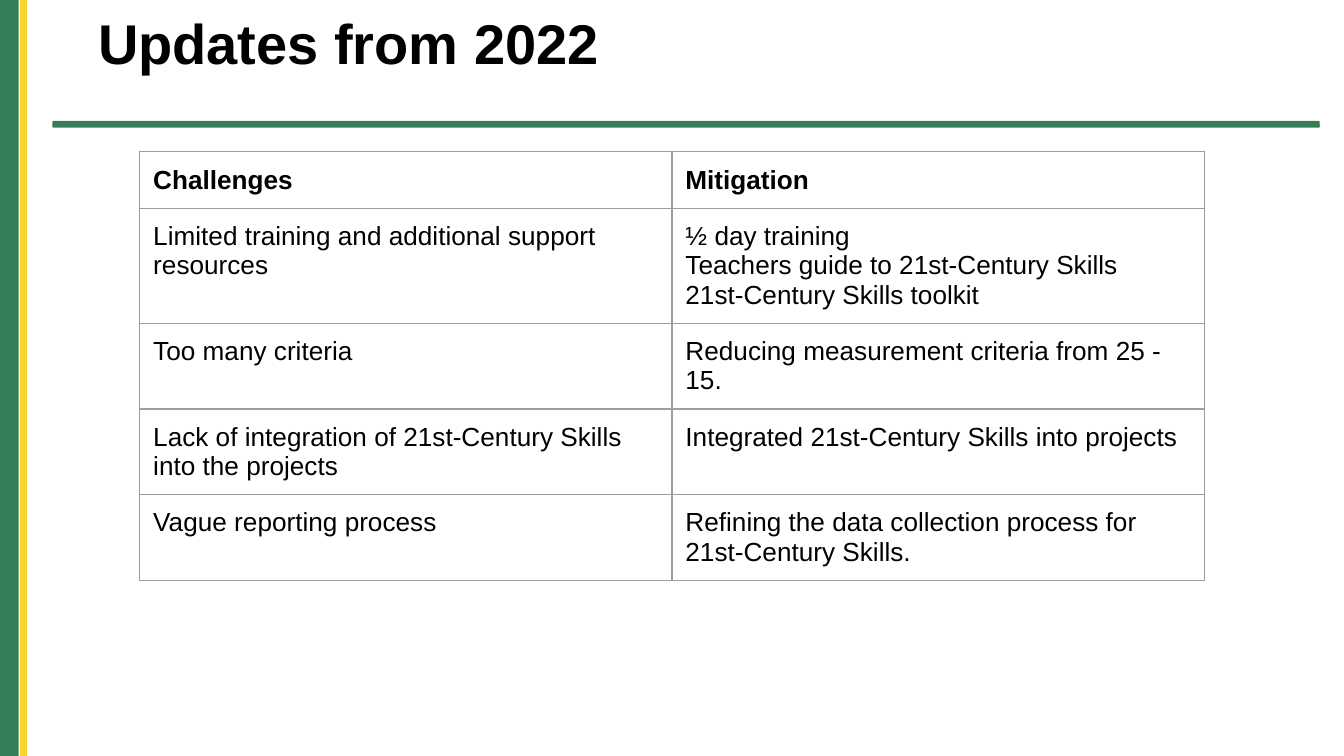
from lxml import etree
from pptx import Presentation
from pptx.dml.color import RGBColor
from pptx.enum.shapes import MSO_SHAPE
from pptx.enum.text import MSO_ANCHOR, MSO_AUTO_SIZE, PP_ALIGN
from pptx.oxml.ns import qn
from pptx.util import Inches, Pt

RECTANGLE = MSO_SHAPE.RECTANGLE
ROUNDED = MSO_SHAPE.ROUNDED_RECTANGLE
TOP = MSO_ANCHOR.TOP
LEFT = PP_ALIGN.LEFT
NO_AUTOFIT = MSO_AUTO_SIZE.NONE

SLIDE_WIDTH = 10
SLIDE_HEIGHT = SLIDE_WIDTH * 9 / 16

COLORS = {
    "green": "367E58",
    "yellow": "F9D32E",
    "black": "000000",
    "white": "FFFFFF",
    "border": "9E9E9E",
}

ROWS = [
    ("Challenges", "Mitigation"),
    ("Limited training and additional support resources",
     "½ day training\nTeachers guide to 21st-Century Skills\n21st-Century Skills toolkit"),
    ("Too many criteria", "Reducing measurement criteria from 25 - 15."),
    ("Lack of integration of 21st-Century Skills into the projects",
     "Integrated 21st-Century Skills into projects"),
    ("Vague reporting process",
     "Refining the data collection process for 21st-Century Skills."),
]


def set_values(target, values):
    for name, value in values.items():
        setattr(target, name, value)


class SlideBuilder:
    """Holds the style and the current slide."""

    font_name = "Arial"

    def __init__(self, slide):
        self.slide = slide
        slide.background.fill.solid()
        slide.background.fill.fore_color.rgb = RGBColor.from_string(COLORS["white"])

    def format_text(self, frame, size, bold, paragraph_format):
        for paragraph in frame.paragraphs:
            set_values(paragraph, paragraph_format)
            set_values(paragraph.font, {"name": self.font_name, "size": Pt(size), "bold": bold})
            paragraph.font.color.rgb = RGBColor.from_string(COLORS["black"])

    def bar(self, left, top, width, height, color, kind=RECTANGLE):
        shape = self.slide.shapes.add_shape(
            kind, Inches(left), Inches(top), Inches(width), Inches(height))
        shape.shadow.inherit = False
        shape.fill.solid()
        shape.fill.fore_color.rgb = RGBColor.from_string(COLORS[color])
        shape.line.fill.background()

    def title(self, text, left, top, width, height):
        shape = self.slide.shapes.title
        set_values(shape, {"left": Inches(left), "top": Inches(top),
                           "width": Inches(width), "height": Inches(height)})
        frame = shape.text_frame
        frame.text = text
        set_values(frame, {
            "margin_left": Inches(0.32), "margin_right": Inches(0.07),
            "margin_top": Inches(0.04), "margin_bottom": Inches(0.04),
            "vertical_anchor": TOP, "auto_size": NO_AUTOFIT, "word_wrap": True})
        self.format_text(frame, 30, True,
                         {"alignment": LEFT, "line_spacing": 0.9, "space_before": Pt(0)})

    def borders(self, cell):
        properties = cell._tc.get_or_add_tcPr()
        for index, side in enumerate(("a:lnL", "a:lnR", "a:lnT", "a:lnB")):
            line = etree.Element(qn(side), w=str(Pt(0.75)))
            fill = etree.SubElement(line, qn("a:solidFill"))
            etree.SubElement(fill, qn("a:srgbClr"), val=COLORS["border"])
            properties.insert(index, line)

    def table(self, rows, left, top, column_width, row_height):
        columns = len(rows[0])
        table = self.slide.shapes.add_table(
            len(rows), columns, Inches(left), Inches(top),
            Inches(column_width * columns), Inches(row_height * len(rows))).table
        set_values(table, {"first_row": False, "horz_banding": False})
        for row_index, texts in enumerate(rows):
            for column_index, text in enumerate(texts):
                cell = table.cell(row_index, column_index)
                cell.text = text
                sides = ("left", "right", "top", "bottom")
                set_values(cell, {f"margin_{side}": Inches(0.1) for side in sides})
                cell.vertical_anchor = TOP
                cell.fill.background()
                self.borders(cell)
                self.format_text(cell.text_frame, 14, row_index == 0, {"alignment": LEFT})


def main():
    presentation = Presentation()
    presentation.slide_width = Inches(SLIDE_WIDTH)
    presentation.slide_height = Inches(SLIDE_HEIGHT)
    title_only = presentation.slide_layouts[5]
    builder = SlideBuilder(presentation.slides.add_slide(title_only))

    # Side stripes
    for left, width, color in ((0, 0.12, "green"), (0.11, 0.03, "green"), (0.15, 0.05, "yellow")):
        builder.bar(left, 0, width, SLIDE_HEIGHT, color)

    # Title and rule below it
    builder.bar(0.39, 0.9, 9.43, 0.05, "green", ROUNDED)
    builder.title("Updates from 2022", 0.41, 0.08, 9.46, 0.68)

    # Challenges and mitigation; rows grow with their text
    builder.table(ROWS, 1.04, 1.13, 3.96, 0.42)

    presentation.save("out.pptx")


if __name__ == "__main__":
    main()
